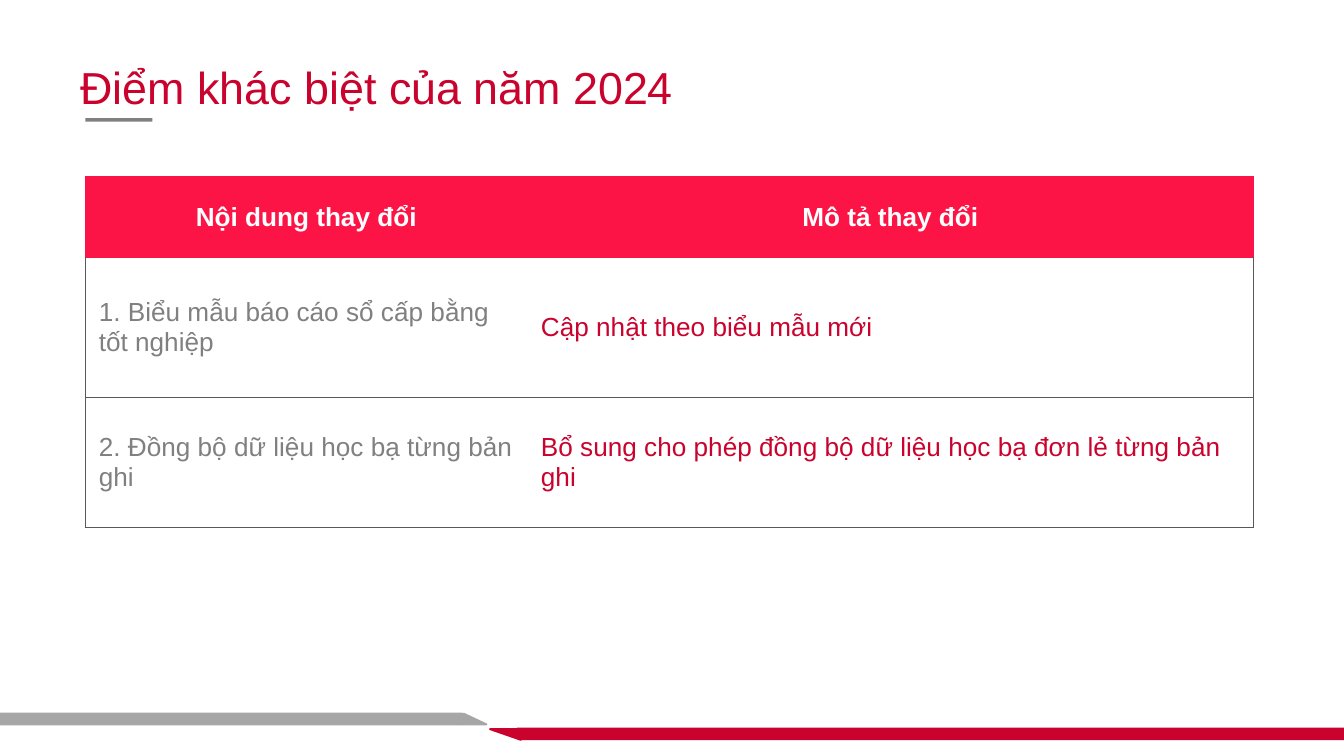
from lxml import etree
from pptx import Presentation, util as u
from pptx.dml.color import RGBColor
from pptx.enum import shapes, text
from pptx.oxml import ns

PX = 4572  # 200 px to the inch
COLORS = {"red": "C9032D", "header": "FC1446", "grey": "808080",
          "light": "A6A6A6", "border": "595959", "white": "FFFFFF"}
FONT = "Arial"


def style(p, size, color, bold=False):
    p.font.name, p.font.size, p.font.bold = FONT, u.Pt(size), bold
    p.font.color.rgb = RGBColor.from_string(COLORS[color])


def set_borders(cell, sides):
    """Draw half-point borders; sides maps L, R, T, B to a colour name or None."""
    tc_pr = cell._tc.get_or_add_tcPr()
    for i, side in enumerate("LRTB"):
        ln = etree.Element(ns.qn(f"a:ln{side}"), w=str(u.Pt(0.5)))
        if sides[side]:
            fill = etree.SubElement(ln, ns.qn("a:solidFill"))
            etree.SubElement(fill, ns.qn("a:srgbClr"), val=COLORS[sides[side]])
        else:
            etree.SubElement(ln, ns.qn("a:noFill"))
        tc_pr.insert(i, ln)


prs = Presentation()
prs.slide_width, prs.slide_height = 2000 * PX, 1125 * PX
s = prs.slides.add_slide(prs.slide_layouts[6])

# Title
sp = s.shapes.add_textbox(100 * PX, 72 * PX, 1800 * PX, 114 * PX)
tf = sp.text_frame
tf.word_wrap = True
tf.vertical_anchor = text.MSO_ANCHOR.MIDDLE
p = tf.paragraphs[0]
p.text = "Điểm khác biệt của năm 2024"
style(p, 24, "red")

# Title underline and footer bands
MSO = shapes.MSO_SHAPE
bars = [
    (MSO.RECTANGLE, 127, 176, 100, 5, 0, "grey", 0),
    (MSO.SNIP_1_RECTANGLE, 0, 1062, 690, 16, 0, "light", 1),
    (MSO.RIGHT_TRIANGLE, 690, 1062, 34, 16, 0, "light", 1),
    (MSO.SNIP_1_RECTANGLE, 770, 1084, 1230, 16, 180, "red", 1),
    (MSO.RIGHT_TRIANGLE, 729, 1085, 46, 16, 180, "red", 1),
]
for kind, x, y, w, h, rotation, color, line in bars:
    sp = s.shapes.add_shape(kind, x * PX, y * PX, w * PX, h * PX)
    sp.rotation = rotation
    sp.shadow.inherit = False
    rgb = RGBColor.from_string(COLORS[color])
    sp.fill.solid()
    sp.fill.fore_color.rgb = rgb
    if line:
        sp.line.color.rgb = rgb
        sp.line.width = u.Pt(line)
    else:
        sp.line.fill.background()

# Table of changes
rows = [
    ("Nội dung thay đổi", "Mô tả thay đổi"),
    ("1. Biểu mẫu báo cáo sổ cấp bằng tốt nghiệp", "Cập nhật theo biểu mẫu mới"),
    ("2. Đồng bộ dữ liệu học bạ từng bản ghi",
     "Bổ sung cho phép đồng bộ dữ liệu học bạ đơn lẻ từng bản ghi"),
]
widths, heights = [658, 1080], [120, 208, 194]
table = s.shapes.add_table(len(rows), len(widths), 127 * PX, 263 * PX,
                           sum(widths) * PX, sum(heights) * PX).table
table.first_row = table.horz_banding = False
for col, width in zip(table.columns, widths):
    col.width = width * PX
for row, height in zip(table.rows, heights):
    row.height = height * PX

for i, row in enumerate(rows):
    for j, words in enumerate(row):
        cell = table.cell(i, j)
        cell.vertical_anchor = text.MSO_ANCHOR.MIDDLE
        p = cell.text_frame.paragraphs[0]
        p.text = words
        if i == 0:
            p.alignment = text.PP_ALIGN.CENTER
            style(p, 14, "white", bold=True)
            cell.fill.solid()
            cell.fill.fore_color.rgb = RGBColor.from_string(COLORS["header"])
        else:
            p.space_before = p.space_after = u.Pt(2)
            style(p, 14, ("grey", "red")[j])
            cell.fill.background()
        edge = "border" if i else "header"
        set_borders(cell, {"L": edge if j == 0 else None,
                           "R": edge if j == 1 else None,
                           "T": "border" if i > 1 else "header",
                           "B": edge})

prs.save("out.pptx")
